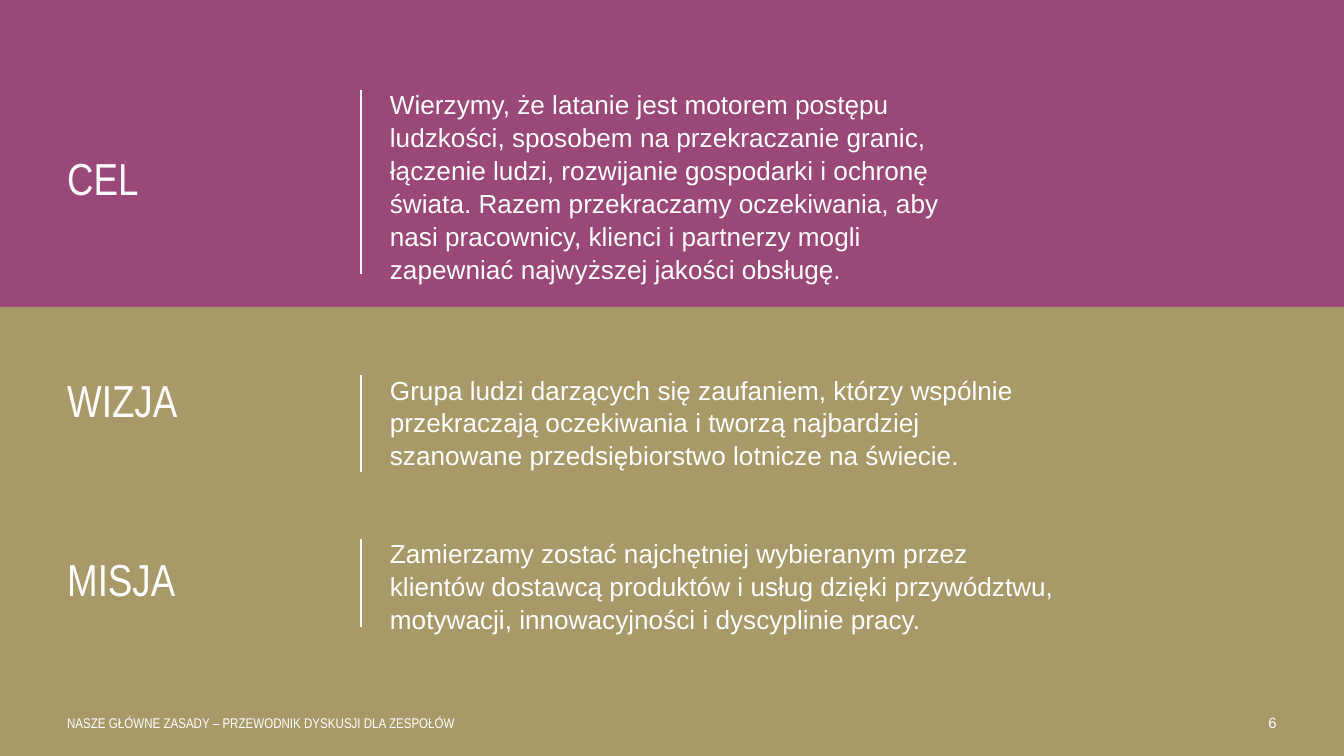
from lxml import etree
from pptx import Presentation
from pptx.dml.color import RGBColor
from pptx.enum.shapes import MSO_CONNECTOR, MSO_SHAPE
from pptx.enum.text import MSO_ANCHOR, PP_ALIGN
from pptx.oxml.ns import qn
from pptx.util import Cm, Pt

LINE, RECT = MSO_CONNECTOR.STRAIGHT, MSO_SHAPE.RECTANGLE
TOP, MID = MSO_ANCHOR.TOP, MSO_ANCHOR.MIDDLE
LEFT, RIGHT = PP_ALIGN.LEFT, PP_ALIGN.RIGHT

COLORS = {"plum": "994878", "olive": "A89968", "white": "FFFFFF"}
WIDE, HIGH = 25.4, 14.29
EDGE = 1.27     # side margin
HEAD = 5.56     # width of the heading column
GAP = 0.54      # from the rule to the body text

# heading, top, heading height, rule height, body width, body height, body
ROWS = [
    ("CEL", 1.65, 3.53, 3.48, 10.69, 4.29,
     "Wierzymy, że latanie jest motorem postępu ludzkości, sposobem na "
     "przekraczanie granic, łączenie ludzi, rozwijanie gospodarki i ochronę "
     "świata. Razem przekraczamy oczekiwania, aby nasi pracownicy, klienci i "
     "partnerzy mogli zapewniać najwyższej jakości obsługę."),
    ("WIZJA", 7.04, 1.14, 1.83, 11.96, 1.65,
     "Grupa ludzi darzących się zaufaniem, którzy wspólnie przekraczają "
     "oczekiwania i tworzą najbardziej szanowane przedsiębiorstwo lotnicze "
     "na świecie."),
    ("MISJA", 10.13, 1.73, 1.68, 12.73, 2.08,
     "Zamierzamy zostać najchętniej wybieranym przez klientów dostawcą "
     "produktów i usług dzięki przywództwu, motywacji, innowacyjności i "
     "dyscyplinie pracy."),
]


def color(name):
    return RGBColor.from_string(COLORS[name])


def add_text(slide, text, x, y, w, h, size, font="Arial", anchor=TOP,
             align=LEFT, wrap=True, space=None, after=0, inset=0):
    box = slide.shapes.add_textbox(Cm(x), Cm(y), Cm(w), Cm(h))
    frame = box.text_frame
    frame.word_wrap = wrap
    frame.vertical_anchor = anchor
    frame.margin_left = frame.margin_right = frame.margin_bottom = 0
    frame.margin_top = Cm(inset)
    para = frame.paragraphs[0]
    para.alignment = align
    para.line_spacing = space
    para.space_after = Pt(after)
    run = para.add_run()
    run.text = text
    run.font.name = font
    run.font.size = Pt(size)
    run.font.color.rgb = color("white")


def add_rule(slide, x, y, h):
    rule = slide.shapes.add_connector(LINE, Cm(x), Cm(y), Cm(x), Cm(y + h))
    rule.line.color.rgb = color("white")
    rule.line.width = Pt(1)
    etree.SubElement(rule._element.spPr, qn("a:effectLst"))


def add_ground(slide, x, y, w, h):
    """Fill the slide with plum and the given box with olive."""
    fill = slide.background.fill
    fill.solid()
    fill.fore_color.rgb = color("plum")
    band = slide.shapes.add_shape(RECT, Cm(x), Cm(y), Cm(w), Cm(h))
    band.shadow.inherit = False
    band.fill.solid()
    band.fill.fore_color.rgb = color("olive")
    band.line.fill.background()


def add_row(slide, x, row):
    """Place a heading, its rule and its body text."""
    head, y, head_h, rule_h, body_w, body_h, body = row
    mid = x + HEAD
    add_text(slide, body, mid + GAP, y, body_w, body_h, 14,
             space=1.05, after=8)
    add_text(slide, head, x, y, HEAD, head_h, 24, font="Arial Narrow",
             anchor=MID, space=0.9)
    add_rule(slide, mid, y + 0.05, rule_h)


def add_footer(slide, x, y, w, h):
    add_text(slide, "NASZE GŁÓWNE ZASADY – PRZEWODNIK DYSKUSJI DLA ZESPOŁÓW",
             x, y, 11.05, h, 7.5, font="Arial Narrow", wrap=False, inset=0.05)
    add_text(slide, "6", x + w - EDGE, y, EDGE, h, 8, align=RIGHT,
             wrap=False, inset=0.03)


def main():
    deck = Presentation()
    deck.slide_width, deck.slide_height = Cm(WIDE), Cm(HIGH)
    slide = deck.slides.add_slide(deck.slide_layouts[6])
    add_ground(slide, 0, 5.8, WIDE, HIGH - 5.8)
    for row in ROWS:
        add_row(slide, EDGE, row)
    add_footer(slide, EDGE, 13.46, WIDE - 2 * EDGE, 0.51)
    deck.save("out.pptx")


if __name__ == "__main__":
    main()
